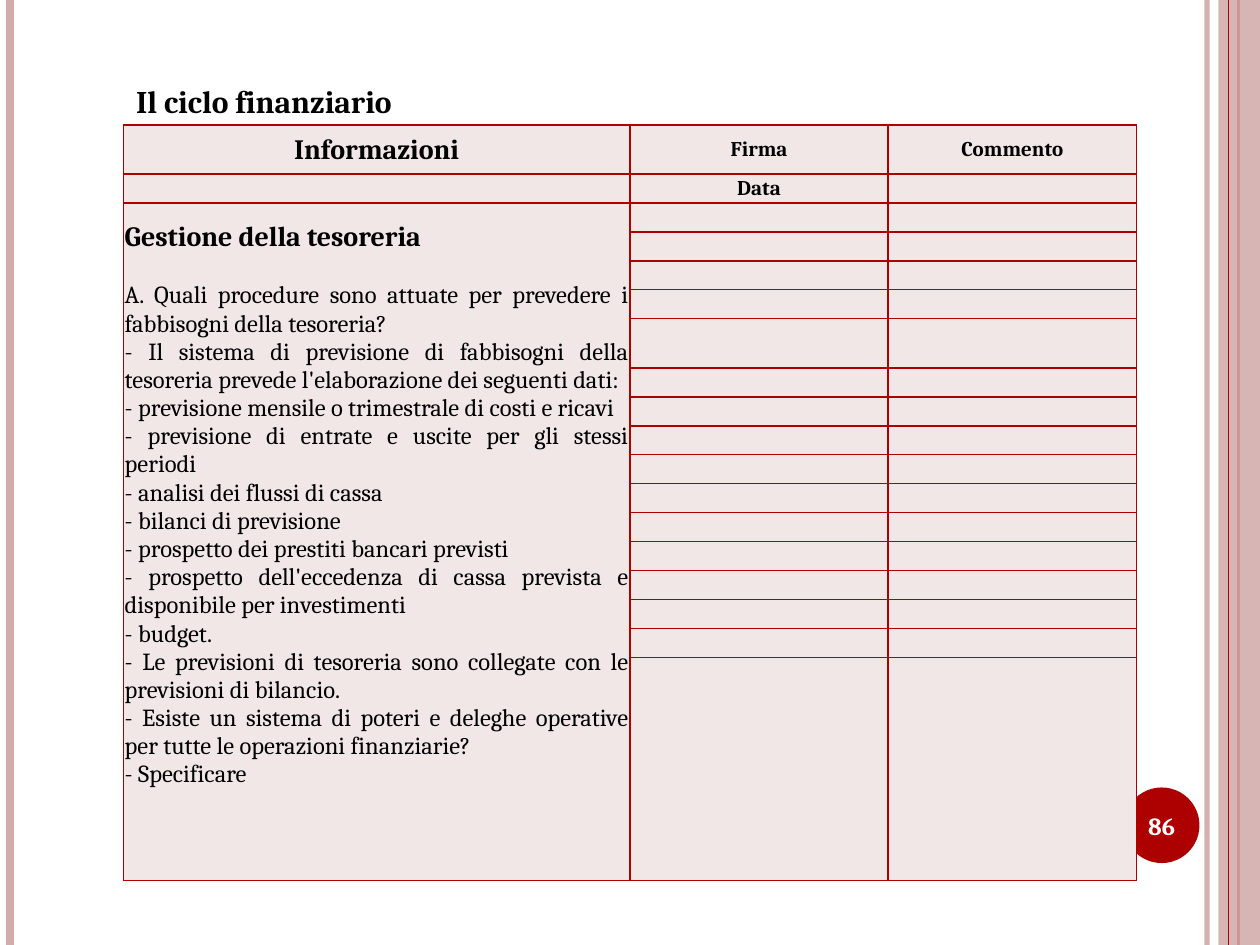
import dataclasses

import pptx
import pptx.dml.color
import pptx.enum.shapes
import pptx.enum.text
import pptx.oxml.ns
import pptx.util
from lxml import etree

FONT = "Cambria"
RED, ROSE, PALE, BLACK, WHITE = "AD0101", "D3ABAB", "F1E7E7", "000000", "FFFFFF"
WIDTH, HEIGHT = 10, 7.5
ALIGN = pptx.enum.text.PP_ALIGN
MIDDLE = pptx.enum.text.MSO_ANCHOR.MIDDLE
Inches, Pt = pptx.util.Inches, pptx.util.Pt

COLUMNS = [4.02, 2.05, 1.97]
ROWS = [0.39] + [0.23] * 5 + [0.39] + [0.23] * 10 + [1.77]
BODY_ROW = 2
HEADING = "Gestione della tesoreria"
QUESTIONS = [
    "A. Quali procedure sono attuate per prevedere i fabbisogni della tesoreria?",
    "- Il sistema di previsione di fabbisogni della tesoreria prevede "
    "l'elaborazione dei seguenti dati:",
    "- previsione mensile o trimestrale di costi e ricavi",
    "- previsione di entrate e uscite per gli stessi periodi",
    "- analisi dei flussi di cassa",
    "- bilanci di previsione",
    "- prospetto dei prestiti bancari previsti",
    "- prospetto dell'eccedenza di cassa prevista e disponibile per investimenti",
    "- budget.",
    "- Le previsioni di tesoreria sono collegate con le previsioni di bilancio.",
    "- Esiste un sistema di poteri e deleghe operative per tutte le operazioni finanziarie?",
    "- Specificare",
]


@dataclasses.dataclass
class Stripe:
    x: float  # share of the slide's width
    color: str
    weight: float
    opacity: int = 100


@dataclasses.dataclass
class Label:
    row: int
    column: int
    text: str
    size: float


STRIPES = [
    Stripe(0.958, ROSE, 3, 93),
    Stripe(0.008, ROSE, 4.5),
    Stripe(0.983, RED, 1.5),
]
BAND_EDGE = Stripe(0.975, RED, 0.75)
LABELS = [
    Label(0, 0, "Informazioni", 16),
    Label(0, 1, "Firma", 12),
    Label(0, 2, "Commento", 12),
    Label(1, 1, "Data", 12),
]


def rgb(color: str) -> pptx.dml.color.RGBColor:
    return pptx.dml.color.RGBColor.from_string(color)


def add_element(parent, tag: str, **attributes: str):
    return etree.SubElement(parent, pptx.oxml.ns.qn(tag), attributes)


def set_opacity(element, percent: int) -> None:
    for color in element.iter(pptx.oxml.ns.qn("a:srgbClr")):
        add_element(color, "a:alpha", val=str(percent * 1000))


def format_paragraph(p, size: float, color: str = BLACK, bold: bool = True,
                     align=ALIGN.CENTER) -> None:
    p.alignment = align
    for r in p.runs:
        r.font.name, r.font.size, r.font.bold = FONT, Pt(size), bold
        r.font.color.rgb = rgb(color)


def add_stripe(s, stripe: Stripe) -> None:
    x = Inches(stripe.x * WIDTH)
    line = s.shapes.add_connector(
        pptx.enum.shapes.MSO_CONNECTOR.STRAIGHT, x, 0, x, Inches(HEIGHT))
    line.line.color.rgb = rgb(stripe.color)
    line.line.width = Pt(stripe.weight)
    properties = line._element.spPr
    if stripe.opacity < 100:
        set_opacity(properties, stripe.opacity)
    add_element(properties, "a:effectLst")


def add_plain_shape(s, kind, left: float, top: float, width: float, height: float,
                    color: str):
    sp = s.shapes.add_shape(kind, *map(Inches, (left, top, width, height)))
    sp.shadow.inherit = False
    sp.fill.solid()
    sp.fill.fore_color.rgb = rgb(color)
    sp.line.fill.background()
    return sp


def style_cell(cell) -> None:
    cell.margin_left = cell.margin_right = cell.margin_top = Inches(0.01)
    cell.margin_bottom = 0
    cell.fill.solid()
    cell.fill.fore_color.rgb = rgb(PALE)
    properties = cell._tc.get_or_add_tcPr()
    for i, side in enumerate(("a:lnL", "a:lnR", "a:lnT", "a:lnB")):
        border = add_element(properties, side, w=str(Pt(1)))
        add_element(add_element(border, "a:solidFill"), "a:srgbClr", val=RED)
        properties.insert(i, border)
    # The size of an empty paragraph keeps its row low.
    add_element(cell.text_frame.paragraphs[0]._p, "a:endParaRPr", sz="900")


def fill_body(cell) -> None:
    cell.margin_top = Inches(0.15)
    tf = cell.text_frame
    tf.text = "\n".join([HEADING] + QUESTIONS)
    for p in tf.paragraphs:
        format_paragraph(p, 14, bold=False, align=ALIGN.JUSTIFY)
    heading = tf.paragraphs[0]
    format_paragraph(heading, 16, align=ALIGN.JUSTIFY)
    heading.space_after = Pt(16)


def add_checklist(s) -> None:
    frame = s.shapes.add_table(
        len(ROWS), len(COLUMNS), Inches(0.98), Inches(0.99),
        Inches(sum(COLUMNS)), Inches(sum(ROWS)))
    table = frame.table
    table.first_row = table.horz_banding = False
    for column, width in zip(table.columns, COLUMNS):
        column.width = Inches(width)
    for row, height in zip(table.rows, ROWS):
        row.height = Inches(height)
        for cell in row.cells:
            style_cell(cell)
    for label in LABELS:
        cell = table.cell(label.row, label.column)
        cell.vertical_anchor = MIDDLE
        cell.text_frame.text = label.text
        format_paragraph(cell.text_frame.paragraphs[0], label.size)
    body = table.cell(BODY_ROW, 0)
    body.merge(table.cell(len(ROWS) - 1, 0))
    fill_body(body)


def set_title(s, text: str) -> None:
    title = s.shapes.title
    title.left, title.top, title.width, title.height = map(
        Inches, (0.98, 0.6, 2.62, 0.4))
    tf = title.text_frame
    tf.text = text
    tf.word_wrap = True
    tf.auto_size = pptx.enum.text.MSO_AUTO_SIZE.NONE
    tf.vertical_anchor = MIDDLE
    format_paragraph(tf.paragraphs[0], 18, align=ALIGN.LEFT)


def add_page_number(s, number: str) -> None:
    badge = add_plain_shape(
        s, pptx.enum.shapes.MSO_SHAPE.OVAL, 8.92, 6.25, 0.6, 0.6, RED)
    tf = badge.text_frame
    tf.margin_left = tf.margin_right = 0
    tf.vertical_anchor = MIDDLE
    tf.text = number
    format_paragraph(tf.paragraphs[0], 14, WHITE)


def main() -> None:
    prs = pptx.Presentation()
    prs.slide_width, prs.slide_height = Inches(WIDTH), Inches(HEIGHT)
    s = prs.slides.add_slide(prs.slide_layouts[5])
    set_title(s, "Il ciclo finanziario")
    for stripe in STRIPES:
        add_stripe(s, stripe)
    band = add_plain_shape(
        s, pptx.enum.shapes.MSO_SHAPE.RECTANGLE, 9.67, 0, 0.33, HEIGHT, ROSE)
    set_opacity(band._element.spPr, 87)
    add_stripe(s, BAND_EDGE)
    add_page_number(s, "86")
    add_checklist(s)
    prs.save("out.pptx")


if __name__ == "__main__":
    main()
